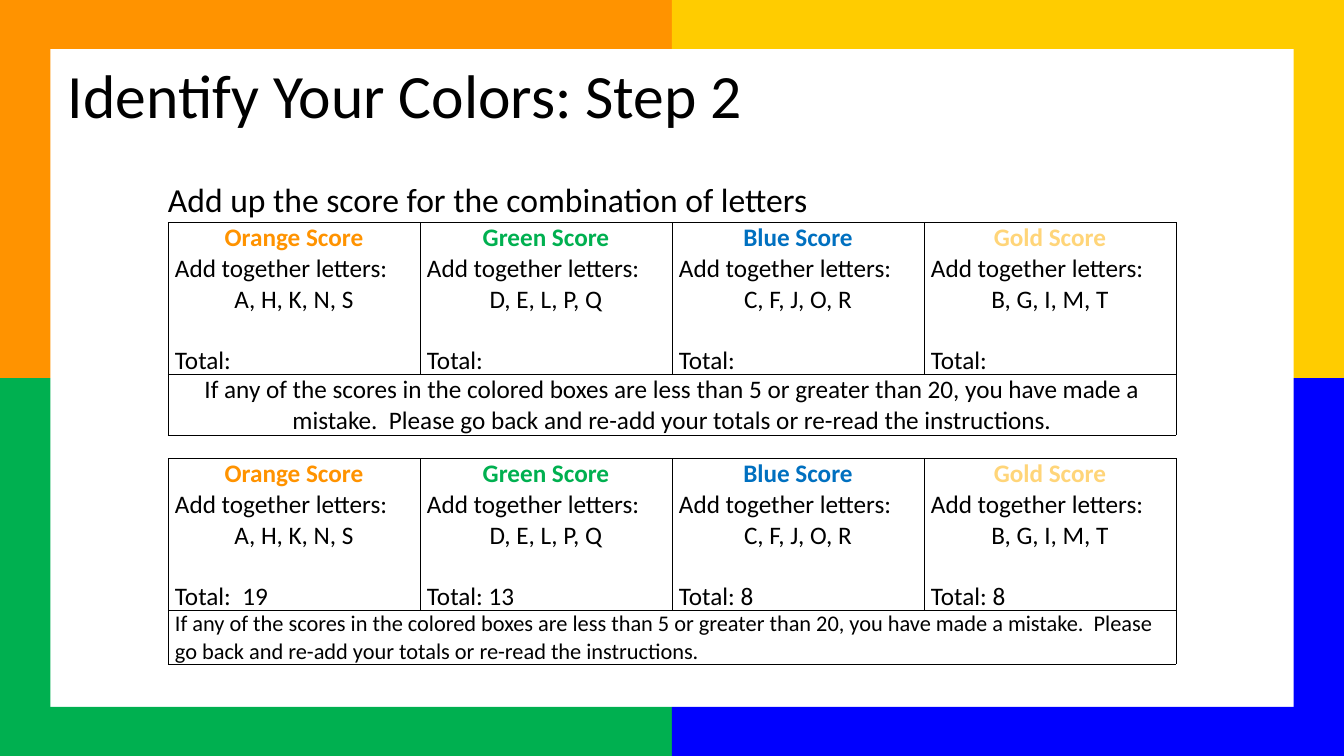
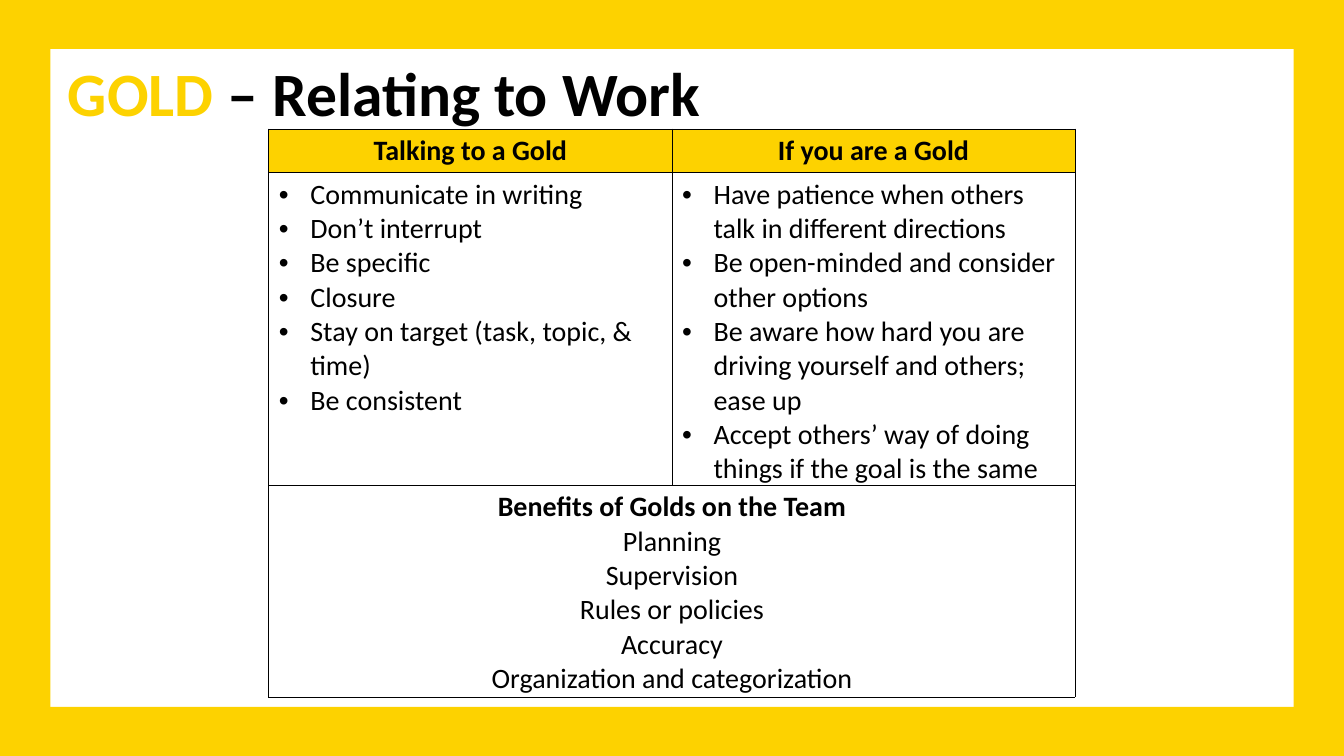
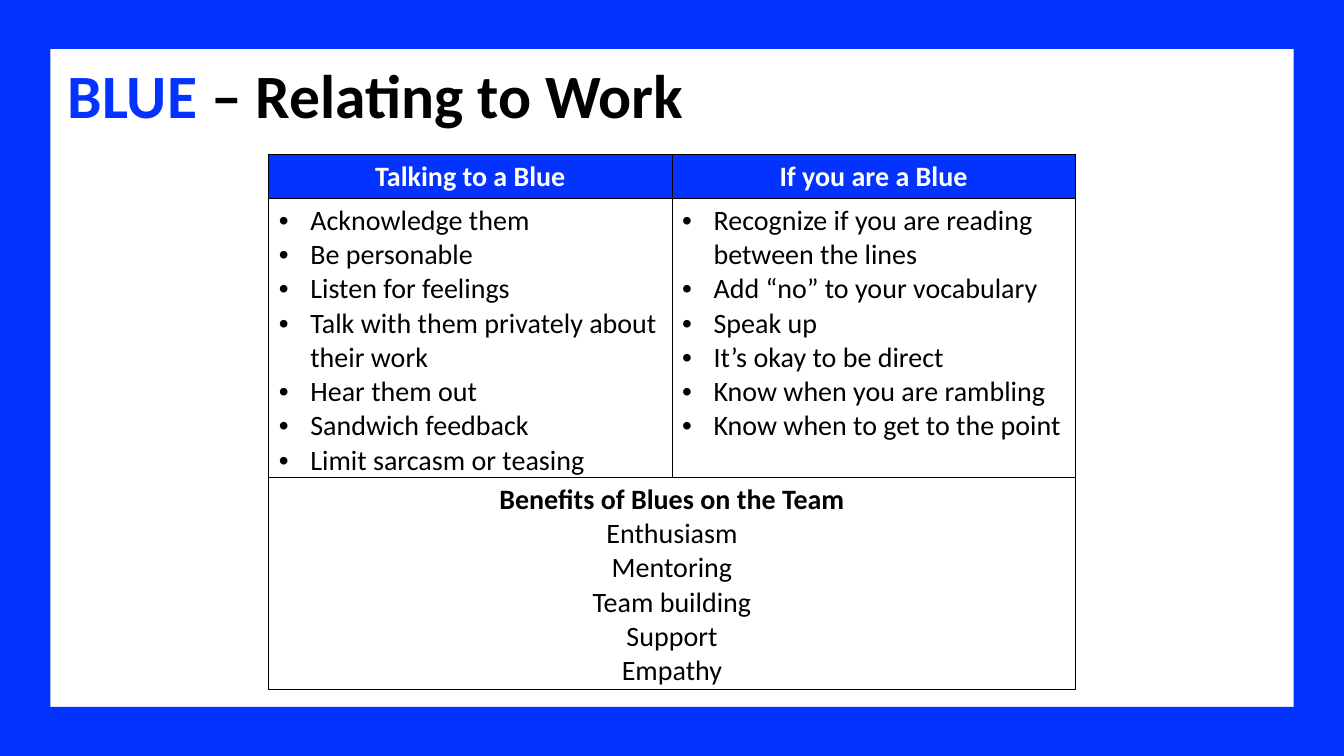
"""Build three slides on scoring and relating to personality colors."""
import dataclasses

import lxml.etree
import pptx
import pptx.dml.color
import pptx.enum.shapes
import pptx.enum.text
import pptx.oxml.ns
import pptx.util

Pt = pptx.util.Pt
RGBColor = pptx.dml.color.RGBColor
LEFT = pptx.enum.text.PP_ALIGN.LEFT
CENTER = pptx.enum.text.PP_ALIGN.CENTER

SLIDE_WIDTH, SLIDE_HEIGHT = 960, 540
FRAME_WIDTH, FRAME_HEIGHT = 36, 35
FONT = "Calibri"

BLACK = RGBColor(0x00, 0x00, 0x00)
WHITE = RGBColor(0xFF, 0xFF, 0xFF)
ORANGE = RGBColor(0xFF, 0x93, 0x00)
GREEN = RGBColor(0x00, 0xB0, 0x50)
SCORE_BLUE = RGBColor(0x00, 0x70, 0xC0)
SCORE_GOLD = RGBColor(0xFF, 0xD5, 0x79)
FRAME_YELLOW = RGBColor(0xFF, 0xCC, 0x00)
FRAME_BLUE = RGBColor(0x00, 0x00, 0xFF)
GOLD = RGBColor(0xFD, 0xD2, 0x00)
BLUE = RGBColor(0x04, 0x32, 0xFF)

SCORES = [
    ("Orange Score", ORANGE, "A, H, K, N, S"),
    ("Green Score", GREEN, "D, E, L, P, Q"),
    ("Blue Score", SCORE_BLUE, "C, F, J, O, R"),
    ("Gold Score", SCORE_GOLD, "B, G, I, M, T"),
]
SCORE_CHECK = (
    "If any of the scores in the colored boxes are less than 5 or greater than 20, "
    "you have made a mistake.  Please go back and re-add your totals or re-read the instructions."
)


@dataclasses.dataclass
class Line:
    text: str
    size: float
    color: RGBColor = BLACK
    bold: bool = False
    align: int = LEFT
    space_before: float = 0
    bullet: bool = False


def format_font(font, size, color, bold):
    font.name = FONT
    font.size = Pt(size)
    font.color.rgb = color
    font.bold = bold


def add_bullet(paragraph):
    properties = paragraph._p.get_or_add_pPr()
    properties.set("marL", str(Pt(22.5)))
    properties.set("indent", str(-Pt(22.5)))
    font = lxml.etree.SubElement(properties, pptx.oxml.ns.qn("a:buFont"))
    font.set("typeface", "Arial")
    character = lxml.etree.SubElement(properties, pptx.oxml.ns.qn("a:buChar"))
    character.set("char", "•")


def write_lines(text_frame, lines):
    text_frame.text = "\n".join(line.text for line in lines)
    for paragraph, line in zip(text_frame.paragraphs, lines):
        paragraph.alignment = line.align
        if line.space_before:
            paragraph.space_before = Pt(line.space_before)
        if line.bullet:
            add_bullet(paragraph)
        format_font(paragraph.runs[0].font, line.size, line.color, line.bold)


def add_text(slide, left, top, width, height, runs, size, bold=False):
    box = slide.shapes.add_textbox(Pt(left), Pt(top), Pt(width), Pt(height))
    text_frame = box.text_frame
    text_frame.word_wrap = True
    text_frame.auto_size = pptx.enum.text.MSO_AUTO_SIZE.SHAPE_TO_FIT_TEXT
    text_frame.margin_left = text_frame.margin_right = text_frame.margin_bottom = 0
    text_frame.margin_top = Pt(1)
    paragraph = text_frame.paragraphs[0]
    paragraph.space_before = Pt(1.1)
    for text, color in runs:
        run = paragraph.add_run()
        run.text = text
        format_font(run.font, size, color, bold)


def add_title(slide, top, runs, bold=False):
    add_text(slide, 48.5, top, 864, 55, runs, 44, bold)


def add_frame(slide, top_left, top_right, bottom_left, bottom_right):
    group = slide.shapes.add_group_shape()
    half_width, half_height = SLIDE_WIDTH / 2, SLIDE_HEIGHT / 2
    corners = [(0, 0, top_left), (1, 0, top_right), (0, 1, bottom_left), (1, 1, bottom_right)]
    for column, row, color in corners:
        bands = [
            (column * half_width, row * (SLIDE_HEIGHT - FRAME_HEIGHT), half_width, FRAME_HEIGHT),
            (column * (SLIDE_WIDTH - FRAME_WIDTH), row * half_height, FRAME_WIDTH, half_height),
        ]
        for bounds in bands:
            band = group.shapes.add_shape(
                pptx.enum.shapes.MSO_SHAPE.RECTANGLE, *(Pt(length) for length in bounds)
            )
            band.shadow.inherit = False
            band.fill.solid()
            band.fill.fore_color.rgb = color
            band.line.fill.background()


def add_borders(cell, width):
    properties = cell._tc.get_or_add_tcPr()
    for side in ("a:lnL", "a:lnR", "a:lnT", "a:lnB"):
        border = lxml.etree.SubElement(properties, pptx.oxml.ns.qn(side))
        border.set("w", str(Pt(width)))
        fill = lxml.etree.SubElement(border, pptx.oxml.ns.qn("a:solidFill"))
        color = lxml.etree.SubElement(fill, pptx.oxml.ns.qn("a:srgbClr"))
        color.set("val", str(BLACK))


def add_grid(slide, left, top, width, row_heights, rows, border, margins, header_fill=None):
    column_count = len(rows[0])
    table = slide.shapes.add_table(
        len(rows), column_count, Pt(left), Pt(top), Pt(width), Pt(sum(row_heights))
    ).table
    table.first_row = table.horz_banding = False
    for row, height in zip(table.rows, row_heights):
        row.height = Pt(height)
    for cell in table.iter_cells():
        add_borders(cell, border)
        cell.fill.background()
        cell.margin_left = cell.margin_right = Pt(margins[0])
        cell.margin_top = cell.margin_bottom = Pt(margins[1])
    table.cell(len(rows) - 1, 0).merge(table.cell(len(rows) - 1, column_count - 1))
    for row_index, row in enumerate(rows):
        for column_index, lines in enumerate(row):
            cell = table.cell(row_index, column_index)
            write_lines(cell.text_frame, lines)
            if header_fill is not None and row_index == 0:
                cell.fill.solid()
                cell.fill.fore_color.rgb = header_fill


def add_score_table(slide, top, row_heights, totals, check):
    scores = [
        [
            Line(name, 18, color, bold=True, align=CENTER),
            Line("Add together letters:", 18),
            Line(letters, 18, align=CENTER),
            Line(total, 18, space_before=22),
        ]
        for (name, color, letters), total in zip(SCORES, totals)
    ]
    add_grid(slide, 120, top, 720, row_heights, [scores, [[check]]], 0.25, (5, 0))


def add_work_table(slide, top, body_height, color, header_color, headers, lists, benefits):
    heading, *items = benefits
    rows = [
        [[Line(text, 20, header_color, bold=True, align=CENTER)] for text in headers],
        [[Line(text, 20, bullet=True) for text in texts] for texts in lists],
        [[Line(heading, 20, bold=True, align=CENTER)]
         + [Line(text, 20, align=CENTER) for text in items]],
    ]
    add_grid(slide, 192, top, 576, (31, body_height, 151), rows, 0.5, (7.2, 3.6), color)


def build_score_slide(slide):
    add_title(slide, 40, [("Identify Your Colors: Step 2", BLACK)])
    add_score_table(slide, 159, (108, 43), ["Total:"] * 4, Line(SCORE_CHECK, 18, align=CENTER))
    add_text(slide, 120, 126.5, 720, 30,
             [("Add up the score for the combination of letters", BLACK)], 24)
    add_score_table(slide, 327.5, (108, 38),
                    ["Total:  19", "Total: 13", "Total: 8", "Total: 8"], Line(SCORE_CHECK, 16))
    add_frame(slide, ORANGE, FRAME_YELLOW, GREEN, FRAME_BLUE)


def build_gold_slide(slide):
    add_title(slide, 38, [("GOLD", GOLD), (" – Relating to Work", BLACK)], bold=True)
    add_work_table(
        slide, 92, 223, GOLD, BLACK,
        ["Talking to a Gold", "If you are a Gold"],
        [
            ["Communicate in writing", "Don’t interrupt", "Be specific", "Closure",
             "Stay on target (task, topic, & time)", "Be consistent"],
            ["Have patience when others talk in different directions",
             "Be open-minded and consider other options",
             "Be aware how hard you are driving yourself and others; ease up",
             "Accept others’ way of doing things if the goal is the same"],
        ],
        ["Benefits of Golds on the Team", "Planning", "Supervision", "Rules or policies",
         "Accuracy", "Organization and categorization"],
    )
    add_frame(slide, *[GOLD] * 4)


def build_blue_slide(slide):
    add_title(slide, 40, [("BLUE ", BLUE), ("– Relating to Work", BLACK)], bold=True)
    add_work_table(
        slide, 110.5, 199, BLUE, WHITE,
        ["Talking to a Blue", "If you are a Blue"],
        [
            ["Acknowledge them", "Be personable", "Listen for feelings",
             "Talk with them privately about their work", "Hear them out",
             "Sandwich feedback", "Limit sarcasm or teasing"],
            ["Recognize if you are reading between the lines", "Add “no” to your vocabulary",
             "Speak up", "It’s okay to be direct", "Know when you are rambling",
             "Know when to get to the point"],
        ],
        ["Benefits of Blues on the Team", "Enthusiasm", "Mentoring", "Team building",
         "Support", "Empathy"],
    )
    add_frame(slide, *[BLUE] * 4)


def main():
    presentation = pptx.Presentation()
    presentation.slide_width = Pt(SLIDE_WIDTH)
    presentation.slide_height = Pt(SLIDE_HEIGHT)
    for build_slide in (build_score_slide, build_gold_slide, build_blue_slide):
        build_slide(presentation.slides.add_slide(presentation.slide_layouts[6]))
    presentation.save("out.pptx")


if __name__ == "__main__":
    main()
